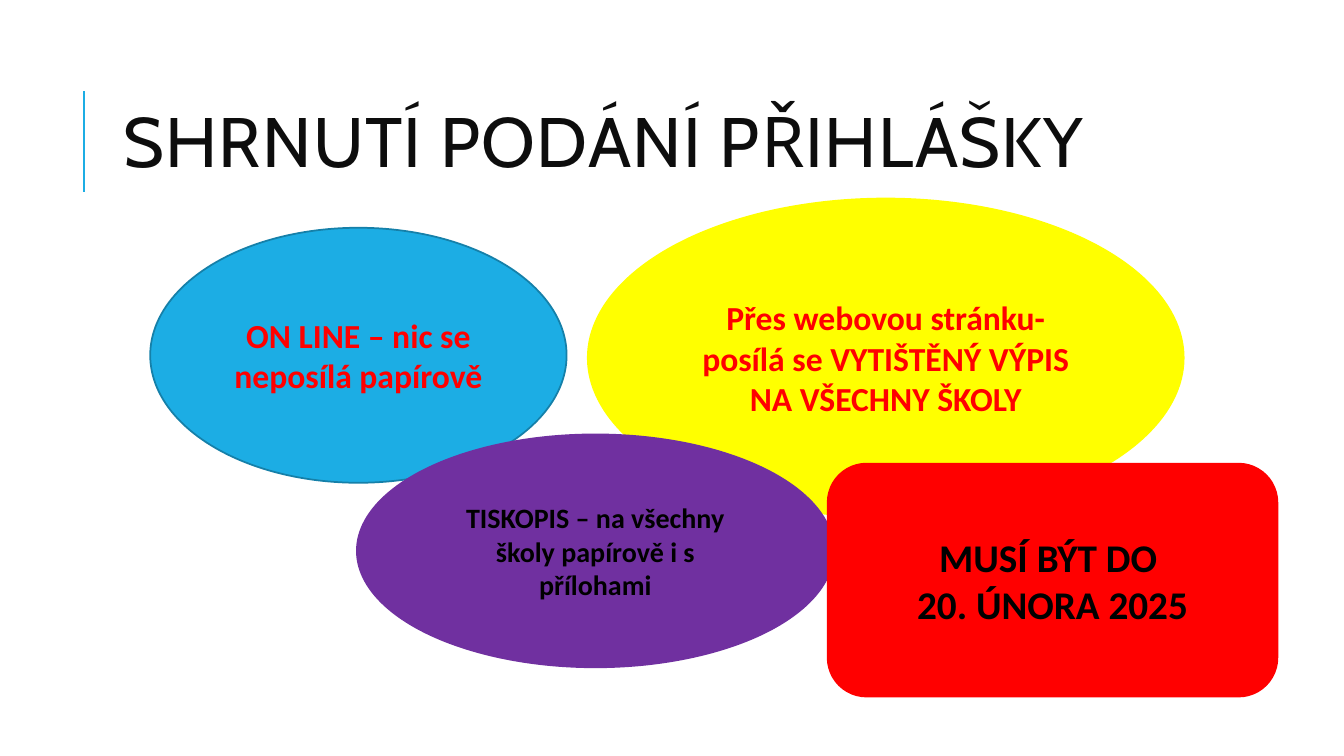
from lxml.etree import SubElement
from pptx import Presentation
from pptx.dml.color import RGBColor
from pptx.enum.shapes import MSO_CONNECTOR, MSO_SHAPE
from pptx.enum.text import MSO_ANCHOR, PP_ALIGN
from pptx.oxml.ns import qn
from pptx.util import Inches, Pt

COLORS = {
    "blue": "1CADE4", "dark blue": "1580A9", "yellow": "FFFF00",
    "purple": "7030A0", "red": "FF0000", "black": "000000", "title": "0D0D0D",
}


def color(name):
    return RGBColor.from_string(COLORS[name])


def format_font(font, values):
    for name, value in values.items():
        if name == "color":
            font.color.rgb = color(value)
        else:
            setattr(font, name, value)


presentation = Presentation()
presentation.slide_width = Inches(13.33)
presentation.slide_height = Inches(7.5)
slide = presentation.slides.add_slide(presentation.slide_layouts[5])

accent = slide.shapes.add_connector(
    MSO_CONNECTOR.STRAIGHT, Inches(0.83), Inches(1.9), Inches(0.83), Inches(0.9))
accent.line.color.rgb = color("blue")
accent.line.width = Pt(1.5)
SubElement(accent._element.spPr, qn("a:effectLst"))

title = slide.shapes.title
title.left, title.top, title.width, title.height = map(Inches, (1.12, 0.64, 10.63, 1.64))
title.text_frame.text = "SHRNUTÍ PODÁNÍ PŘIHLÁŠKY"
title.text_frame.vertical_anchor = MSO_ANCHOR.MIDDLE
paragraph = title.text_frame.paragraphs[0]
paragraph.alignment = PP_ALIGN.LEFT
paragraph.line_spacing = 0.8
run = paragraph.runs[0]
format_font(run.font, {"name": "Cabin", "size": Pt(50), "color": "title"})
run._r.get_or_add_rPr().set("spc", "100")

OVAL, ROUNDED = MSO_SHAPE.OVAL, MSO_SHAPE.ROUNDED_RECTANGLE
bubbles = [
    (OVAL, (1.49, 2.26, 4.13, 2.53), "blue", "dark blue", 24, "red",
     ["ON LINE – nic se neposílá papírově"]),
    (OVAL, (5.83, 1.97, 5.91, 3.16), "yellow", "yellow", 24, "red",
     ["Přes webovou stránku- posílá se VYTIŠTĚNÝ VÝPIS NA VŠECHNY ŠKOLY"]),
    (OVAL, (3.54, 4.31, 4.73, 2.31), "purple", "purple", 20, "black",
     ["TISKOPIS – na všechny školy papírově i s přílohami"]),
    (ROUNDED, (8.21, 4.6, 4.46, 2.31), "red", "red", 28, "black",
     ["MUSÍ BÝT DO ", "20. ÚNORA 2025"]),
]

for kind, box, fill, outline, size, text_color, lines in bubbles:
    shape = slide.shapes.add_shape(kind, *map(Inches, box))
    shape.shadow.inherit = False
    shape.fill.solid()
    shape.fill.fore_color.rgb = color(fill)
    shape.line.color.rgb = color(outline)
    shape.line.width = Pt(1.25)
    frame = shape.text_frame
    frame.word_wrap = True
    frame.vertical_anchor = MSO_ANCHOR.MIDDLE
    frame.text = "\n".join(lines)
    for paragraph in frame.paragraphs:
        paragraph.alignment = PP_ALIGN.CENTER
        format_font(paragraph.runs[0].font, {
            "name": "Calibri", "size": Pt(size), "bold": True, "color": text_color})

presentation.save("out.pptx")
